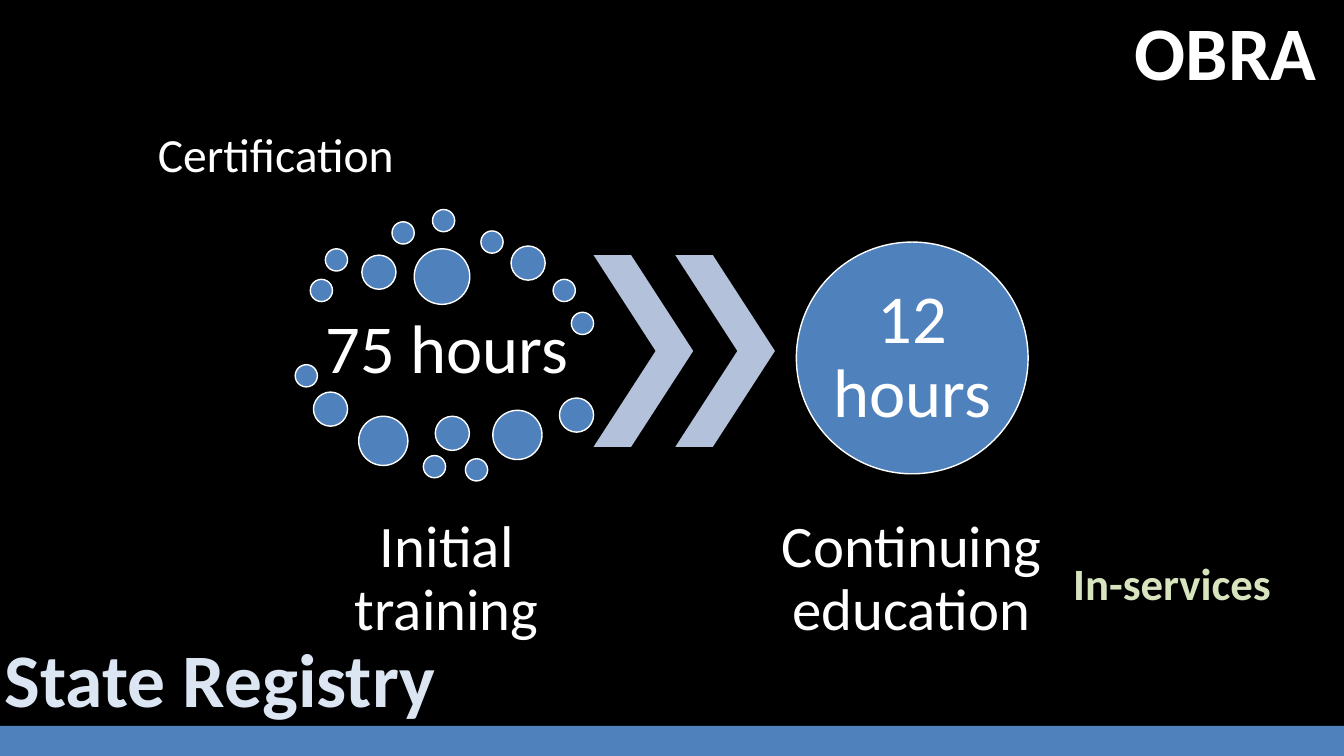
from dataclasses import dataclass

from pptx import Presentation
from pptx.dml.color import RGBColor
from pptx.enum import shapes, text
from pptx.util import Cm, Pt


@dataclass(frozen=True)
class Theme:
    font: str = "Calibri"
    background: str = "000000"
    white: str = "FFFFFF"
    blue: str = "4F81BD"
    chevron: str = "B3C1DB"
    green: str = "D7E4BD"
    pale_blue: str = "DCE6F2"
    title: int = 34
    hours: int = 49
    stage: int = 42
    banner: int = 54
    note: int = 32


THEME = Theme()
STAGE_WIDTH = 6.88
INITIAL_LEFT, CONTINUING_LEFT = 7.82, 19.53

# Dot diameter -> left and top of each dot around "75 hours", in cm
DOTS = {
    0.56: [(7.82, 7.04), (8.2, 6.27), (9.88, 5.59), (10.9, 5.28), (12.12, 5.82),
           (13.94, 7.04), (14.4, 7.87), (7.44, 9.19), (10.67, 11.48), (11.73, 11.56)],
    0.86: [(9.12, 6.43), (12.88, 6.2), (7.9, 9.88), (10.97, 10.49), (14.1, 10.03)],
    1.24: [(9.04, 10.49), (12.42, 10.34)],
    1.4: [(10.44, 6.27)],
}


def box(left, top, width, height):
    return Cm(left), Cm(top), Cm(width), Cm(height)


def write(shape, words, *, size, color=THEME.white, bold=False, align=text.PP_ALIGN.CENTER,
          anchor=text.MSO_ANCHOR.MIDDLE, spacing=0.9, inset=(0.25, 0.13), wrap=True):
    """Fill a shape with one formatted paragraph; inset is (sides, top and bottom) in cm."""
    frame = shape.text_frame
    frame.auto_size = text.MSO_AUTO_SIZE.NONE
    frame.word_wrap = wrap
    frame.vertical_anchor = anchor
    frame.margin_left = frame.margin_right = Cm(inset[0])
    frame.margin_top = frame.margin_bottom = Cm(inset[1])
    paragraph = frame.paragraphs[0]
    paragraph.alignment = align
    paragraph.line_spacing = spacing
    run = paragraph.add_run()
    run.text = words
    run.font.name = THEME.font
    run.font.size = Pt(size)
    run.font.bold = bold
    run.font.color.rgb = RGBColor.from_string(color)


def add_figure(slide, kind, bounds, fill, line=None):
    figure = slide.shapes.add_shape(kind, *box(*bounds))
    figure.shadow.inherit = False
    figure.fill.solid()
    figure.fill.fore_color.rgb = RGBColor.from_string(fill)
    if line:
        figure.line.color.rgb = RGBColor.from_string(line)
        figure.line.width = Pt(1)
    else:
        figure.line.fill.background()
    return figure


def add_circle(slide, left, top, diameter):
    return add_figure(slide, shapes.MSO_SHAPE.OVAL, (left, top, diameter, diameter),
                      THEME.blue, THEME.white)


def add_label(slide, words, bounds, **style):
    write(slide.shapes.add_textbox(*box(*bounds)), words, **style)


def add_banner(slide, words, bounds, **style):
    add_label(slide, words, bounds, bold=True, spacing=1.0, wrap=False,
              anchor=text.MSO_ANCHOR.TOP, **style)


def add_title(slide, words):
    title = slide.shapes.title
    title.left, title.top, title.width, title.height = box(3.73, 1.3, 26.42, 3.43)
    write(title, words, size=THEME.title, align=text.PP_ALIGN.LEFT,
          anchor=text.MSO_ANCHOR.BOTTOM)


def main():
    deck = Presentation()
    deck.slide_width, deck.slide_height = Cm(33.87), Cm(19.05)
    slide = deck.slides.add_slide(deck.slide_layouts[5])
    slide.background.fill.solid()
    slide.background.fill.fore_color.rgb = RGBColor.from_string(THEME.background)

    add_figure(slide, shapes.MSO_SHAPE.RECTANGLE, (0, 18.29, 33.87, 0.76), THEME.blue)
    add_title(slide, "Certification")

    add_label(slide, "75 hours", (INITIAL_LEFT, 7.72, STAGE_WIDTH, 2.26),
              size=THEME.hours, inset=(0.18, 0.18))
    for diameter, corners in DOTS.items():
        for left, top in corners:
            add_circle(slide, left, top, diameter)

    for left in (14.96, 17.02):
        chevron = add_figure(slide, shapes.MSO_SHAPE.CHEVRON, (left, 6.43, 2.51, 4.83),
                             THEME.chevron)
        chevron.adjustments[0] = 0.623

    write(add_circle(slide, 20.07, 6.1, 5.84), "12 hours", size=THEME.hours, inset=(0, 0))

    for stage, left in (("Initial training", INITIAL_LEFT),
                        ("Continuing education", CONTINUING_LEFT)):
        add_label(slide, stage, (left, 12.5, STAGE_WIDTH, 4.24),
                  size=THEME.stage, inset=(0.15, 0.15))

    add_banner(slide, "OBRA", (28.32, 0, 5.13, 2.57), size=THEME.banner)
    add_banner(slide, "In-services", (26.77, 13.87, 5.54, 1.63),
               size=THEME.note, color=THEME.green)
    add_banner(slide, "State Registry", (-0.2, 15.8, 11.48, 2.57),
               size=THEME.banner, color=THEME.pale_blue)

    deck.save("out.pptx")


if __name__ == "__main__":
    main()
